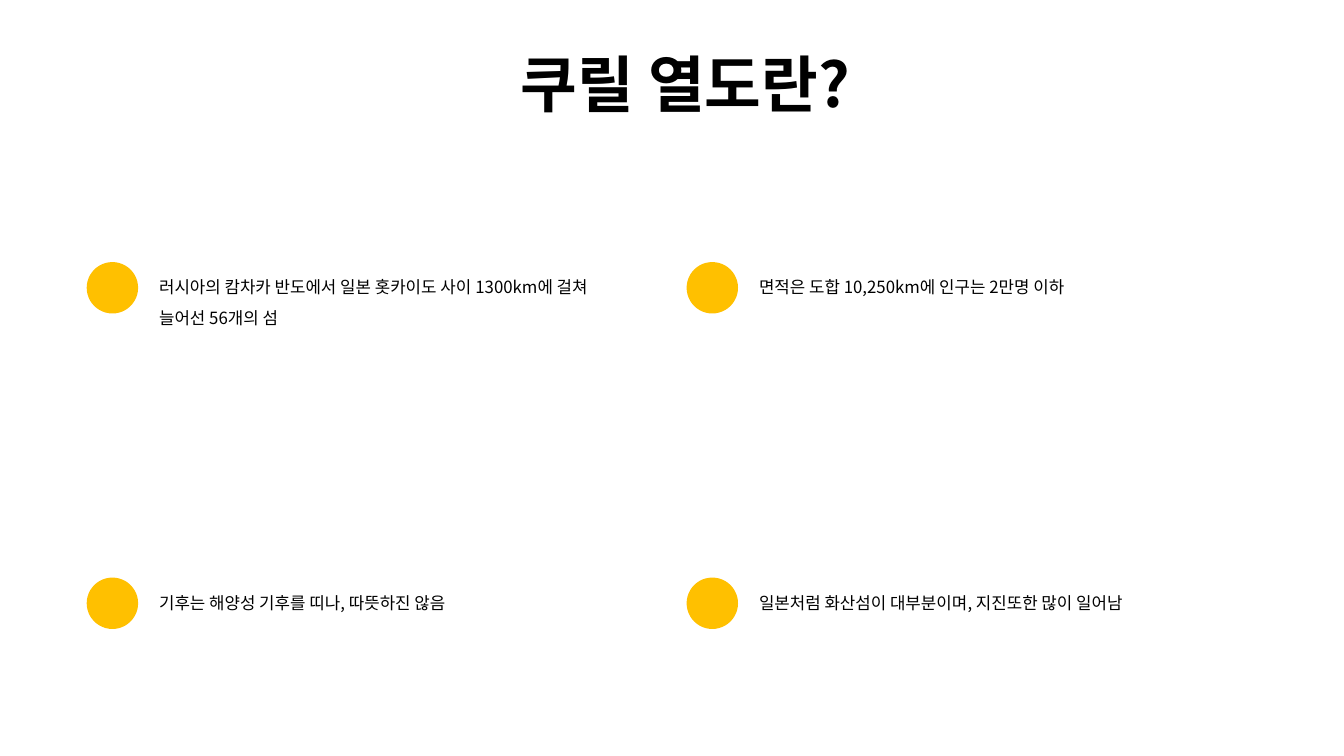
from lxml import etree
from pptx import Presentation
from pptx import util as u
from pptx.dml.color import RGBColor
from pptx.enum import shapes, text
from pptx.oxml.ns import qn

COLORS = {"ink": "000000", "marker": "FFC000"}
FONT = "Noto Sans CJK KR"
SLIDE_WIDTH, SLIDE_HEIGHT = 13.33, 7.5
GRID_LEFT, GRID_TOP = 0.86, 2.6
COLUMN_STEP, ROW_STEP = 5.95, 3.13
MARKER_SIZE = 0.51
FACT_OFFSET, FACT_WIDTH, LINE_HEIGHT = 0.62, 5.03, 0.36
TITLE = "쿠릴 열도란?"
FACTS = [
    [
        ["러시아의 캄차카 반도에서 일본 홋카이도 사이 1300km에 걸쳐", "늘어선 56개의 섬"],
        ["면적은 도합 10,250km에 인구는 2만명 이하"],
    ],
    [
        ["기후는 해양성 기후를 띠나, 따뜻하진 않음"],
        ["일본처럼 화산섬이 대부분이며, 지진또한 많이 일어남"],
    ],
]


def add_text(slide, lines, box, size=12, bold=False, wrap=True,
             align=text.PP_ALIGN.JUSTIFY, spacing=1.5):
    """Add a text box with one paragraph per line."""
    frame = slide.shapes.add_textbox(*map(u.Inches, box)).text_frame
    frame.word_wrap = wrap
    frame.auto_size = text.MSO_AUTO_SIZE.SHAPE_TO_FIT_TEXT
    for index, line in enumerate(lines):
        paragraph = frame.paragraphs[0] if index == 0 else frame.add_paragraph()
        paragraph.alignment = align
        paragraph.line_spacing = spacing
        run = paragraph.add_run()
        run.text = line
        run.font.size = u.Pt(size)
        run.font.bold = bold
        run.font.name = FONT
        run.font.color.rgb = RGBColor.from_string(COLORS["ink"])
        etree.SubElement(run.font._element, qn("a:ea"), typeface=FONT)


def add_marker(slide, left, top):
    """Add the round marker in front of a fact."""
    marker = slide.shapes.add_shape(
        shapes.MSO_SHAPE.OVAL, *map(u.Inches, (left, top, MARKER_SIZE, MARKER_SIZE)))
    marker.shadow.inherit = False
    marker.fill.solid()
    marker.fill.fore_color.rgb = RGBColor.from_string(COLORS["marker"])
    marker.line.fill.background()


def add_fact(slide, column, row, lines):
    """Add a marker and its fact at a grid position."""
    left = GRID_LEFT + column * COLUMN_STEP
    top = GRID_TOP + row * ROW_STEP
    add_marker(slide, left, top)
    add_text(slide, lines,
             (left + FACT_OFFSET, top, FACT_WIDTH, LINE_HEIGHT * len(lines)))


def main():
    """Build and save the slide."""
    deck = Presentation()
    deck.slide_width = u.Inches(SLIDE_WIDTH)
    deck.slide_height = u.Inches(SLIDE_HEIGHT)
    slide = deck.slides.add_slide(deck.slide_layouts[6])
    add_text(slide, [TITLE], (4.91, 0.41, 3.78, 0.84), size=44, bold=True,
             wrap=False, align=text.PP_ALIGN.CENTER, spacing=1.0)
    for row, facts in enumerate(FACTS):
        for column, lines in enumerate(facts):
            add_fact(slide, column, row, lines)
    deck.save("out.pptx")


if __name__ == "__main__":
    main()
